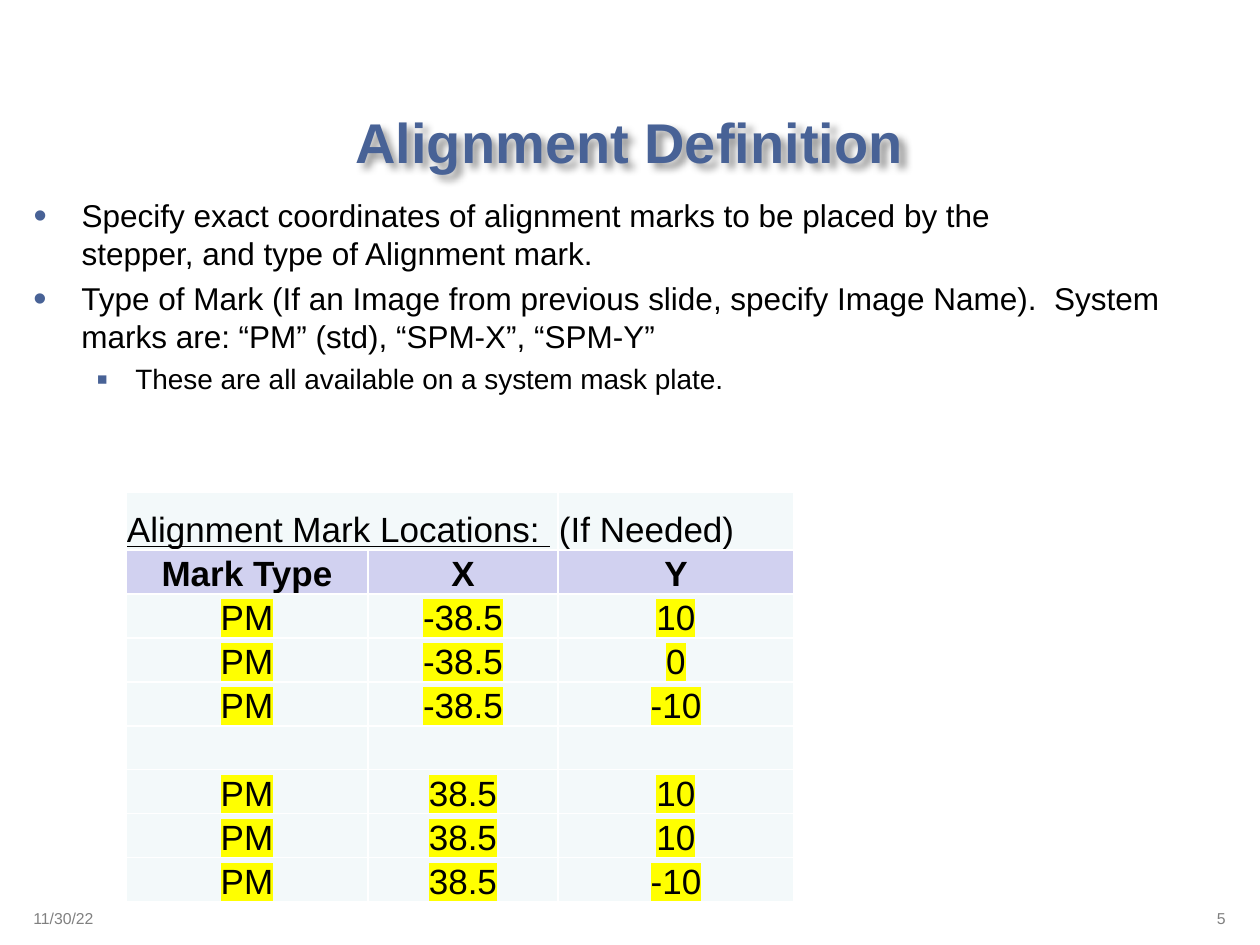
from lxml.etree import SubElement
from pptx import Presentation
from pptx.dml.color import RGBColor
from pptx.enum.text import MSO_ANCHOR, MSO_AUTO_SIZE, PP_ALIGN
from pptx.oxml.ns import qn
from pptx.util import Pt

SCALE = 914400 / 126
COLORS = {
    "accent": "486296",
    "text": "000000",
    "footer": "808080",
    "cell": "F3F9FA",
    "header": "D1D1F0",
    "border": "FFFFFF",
    "mark": "FFFF00",
}


def px(n):
    return round(n * SCALE)


def add(parent, tag, **attrs):
    return SubElement(parent, qn(tag), {k: str(v) for k, v in attrs.items()})


class SlideBuilder:
    font = "Arial"

    def __init__(self, prs):
        self.s = prs.slides.add_slide(prs.slide_layouts[1])

    def place(self, sp, x, y, w, h):
        sp.left, sp.top, sp.width, sp.height = px(x), px(y), px(w), px(h)
        sp.text_frame.word_wrap = True
        sp.text_frame.auto_size = MSO_AUTO_SIZE.NONE
        return sp.text_frame

    def box(self):
        return self.s.shapes.add_textbox(0, 0, 0, 0)

    def run(self, p, text, size, color="text", bold=False, underline=False, mark=False):
        r = p.add_run()
        r.text = text
        f = r.font
        f.size, f.bold, f.underline = Pt(size), bold, underline
        f.color.rgb = RGBColor.from_string(COLORS[color])
        f.name = self.font
        if mark:
            rPr = r._r.get_or_add_rPr()
            hl = add(rPr, "a:highlight")
            add(hl, "a:srgbClr", val=COLORS["mark"])
            rPr.find(qn("a:solidFill")).addnext(hl)

    def title(self, text, *at):
        sp = self.s.shapes.title
        tf = self.place(sp, *at)
        tf.vertical_anchor = MSO_ANCHOR.MIDDLE
        p = tf.paragraphs[0]
        p.alignment = PP_ALIGN.CENTER
        self.run(p, text, 32, "accent", bold=True)
        effects = add(sp._element.spPr, "a:effectLst")
        shadow = add(effects, "a:outerShdw", blurRad=50800, dist=50800,
                     dir=2700000, algn="tl", rotWithShape=0)
        add(add(shadow, "a:srgbClr", val="000000"), "a:alpha", val=40000)

    def bullets(self, sp, items, *at):
        tf = self.place(sp, *at)
        for i, (level, text) in enumerate(items):
            p = tf.add_paragraph() if i else tf.paragraphs[0]
            margin, indent, char, size = [(48, -48, "•", 18), (102, -39, "▪", 16)][level]
            p.level = level
            p.space_before = Pt(4 if i else 0)
            pPr = p._p.get_or_add_pPr()
            pPr.set("marL", str(px(margin)))
            pPr.set("indent", str(px(indent)))
            add(add(pPr, "a:buClr"), "a:srgbClr", val=COLORS["accent"])
            add(pPr, "a:buSzPct", val=120000)
            add(pPr, "a:buFont", typeface=self.font)
            add(pPr, "a:buChar", char=char)
            self.run(p, text, size)

    def footer(self, text, align, *at):
        p = self.place(self.box(), *at).paragraphs[0]
        p.alignment = align
        self.run(p, text, 9, "footer")

    def cell(self, cell, text, fill, align=PP_ALIGN.CENTER, **style):
        cell.margin_left = cell.margin_right = cell.margin_top = px(1)
        cell.margin_bottom = 0
        cell.vertical_anchor = MSO_ANCHOR.BOTTOM
        tcPr = cell._tc.get_or_add_tcPr()
        for side in "LRTB":
            ln = add(tcPr, f"a:ln{side}", w=Pt(1))
            add(add(ln, "a:solidFill"), "a:srgbClr", val=COLORS["border"])
        cell.fill.solid()
        cell.fill.fore_color.rgb = RGBColor.from_string(COLORS[fill])
        p = cell.text_frame.paragraphs[0]
        p.alignment = align
        if text:
            self.run(p, text, 20, **style)

    def table(self, x, y, cols, heights, rows):
        frame = self.s.shapes.add_table(len(rows), len(cols), px(x), px(y),
                                        px(sum(cols)), px(sum(heights)))
        t = frame.table
        t.first_row = t.horz_banding = False
        for col, w in zip(t.columns, cols):
            col.width = px(w)
        for row, h in zip(t.rows, heights):
            row.height = px(h)
        t.cell(0, 0).merge(t.cell(0, 1))
        for i, values in enumerate(rows):
            for j, value in enumerate(values):
                c = t.cell(i, j)
                if i == 0:
                    self.cell(c, value, "cell", PP_ALIGN.LEFT, underline=j == 0)
                elif i == 1:
                    self.cell(c, value, "header", bold=True)
                else:
                    self.cell(c, value, "cell", mark=True)


def main():
    prs = Presentation()
    prs.slide_width, prs.slide_height = px(1260), px(945)
    b = SlideBuilder(prs)
    b.title("Alignment Definition", 94, 94, 1071, 94)
    b.bullets(b.s.placeholders[1], [
        (0, "Specify exact coordinates of alignment marks to be placed by the "
            "stepper, and type of Alignment mark."),
    ], 21, 190, 1071, 126)
    b.footer("11/30/22", PP_ALIGN.LEFT, 21, 903, 262, 32)
    b.footer("5", PP_ALIGN.RIGHT, 976, 903, 262, 32)
    rows = [
        ("Alignment Mark Locations: ", "", "(If Needed)"),
        ("Mark Type", "X", "Y"),
        ("PM", "-38.5", "10"),
        ("PM", "-38.5", "0"),
        ("PM", "-38.5", "-10"),
        ("", "", ""),
        ("PM", "38.5", "10"),
        ("PM", "38.5", "10"),
        ("PM", "38.5", "-10"),
    ]
    b.table(126, 492, [242, 190, 236], [58] + [44] * 8, rows)
    b.bullets(b.box(), [
        (0, "Type of Mark (If an Image from previous slide, specify Image Name).  "
            "System marks are: “PM” (std), “SPM-X”, “SPM-Y”"),
        (1, "These are all available on a system mask plate."),
    ], 21, 273, 1218, 151)
    prs.save("out.pptx")


if __name__ == "__main__":
    main()
